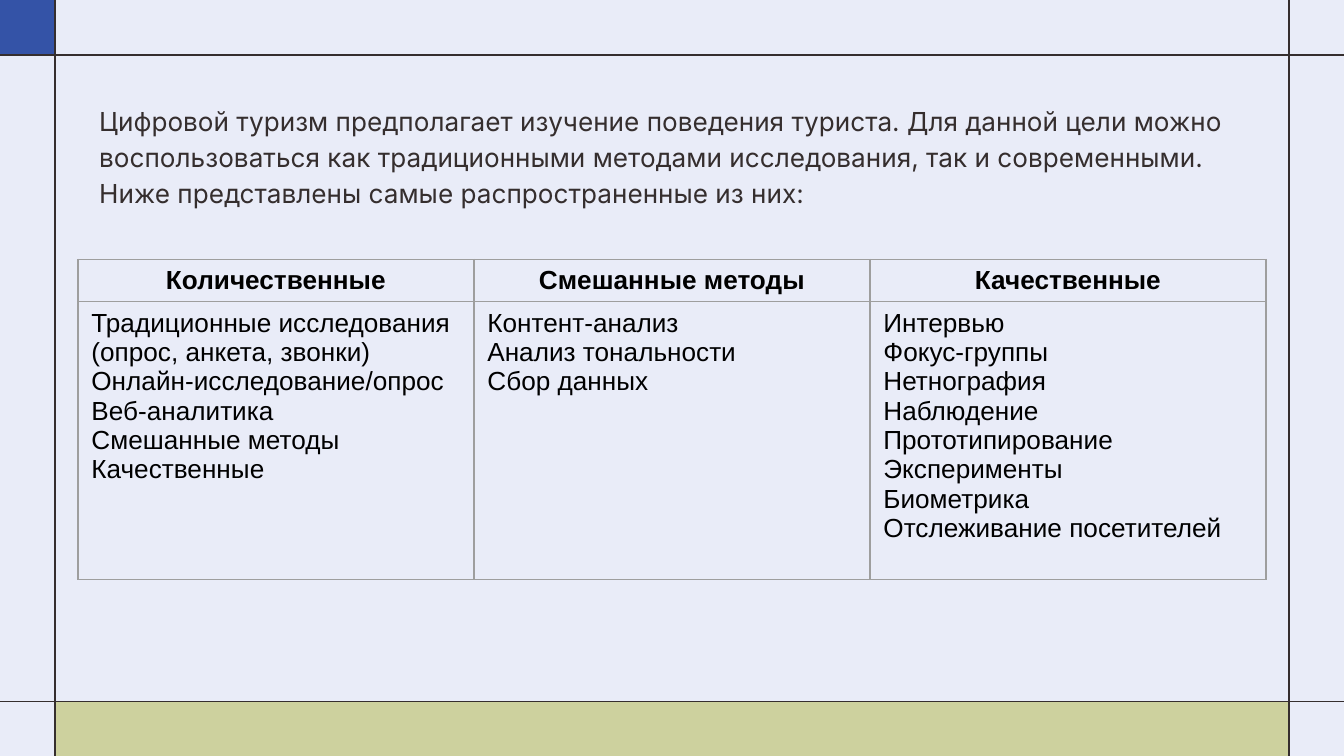
from lxml.etree import SubElement
from pptx import Presentation
from pptx.dml.color import RGBColor as RGB
from pptx.enum.shapes import MSO_CONNECTOR as LINE, MSO_SHAPE as SHAPE
from pptx.enum.text import PP_ALIGN as ALIGN
from pptx.oxml import parse_xml
from pptx.oxml.ns import nsdecls, qn
from pptx.util import Inches, Pt

THEME = {
    "back": "E9ECF8", "blue": "3453A7", "green": "CDD19E",
    "ink": "352E2E", "black": "000000", "grid": "9E9E9E",
    "size": 14, "rule": 0.75, "intro": "Inter", "table": "Arial",
}

INTRO = (
    "Цифровой туризм предполагает изучение поведения туриста. "
    "Для данной цели можно воспользоваться как традиционными методами "
    "исследования, так и современными. "
    "Ниже представлены самые распространенные из них:"
)
METHODS = {
    "Количественные": [
        "Традиционные исследования (опрос, анкета, звонки)",
        "Онлайн-исследование/опрос",
        "Веб-аналитика",
        "Смешанные методы",
        "Качественные",
    ],
    "Смешанные методы": [
        "Контент-анализ",
        "Анализ тональности",
        "Сбор данных",
    ],
    "Качественные": [
        "Интервью",
        "Фокус-группы",
        "Нетнография",
        "Наблюдение",
        "Прототипирование",
        "Эксперименты",
        "Биометрика",
        "Отслеживание посетителей",
    ],
}

WIDTH = 10
HEIGHT = WIDTH * 9 / 16
BLEED = 0.05
EDGE = 0.41
RIGHT, BASE = WIDTH - EDGE, 5.22
ROWS = [0.31, 2.07, 0.67]


def color(name):
    return RGB.from_string(THEME[name])


def box(left, top, width, height):
    return [Inches(n) for n in (left, top, width, height)]


def add_block(slide, place, fill):
    block = slide.shapes.add_shape(SHAPE.RECTANGLE, *box(*place))
    block.shadow.inherit = False
    block.fill.solid()
    block.fill.fore_color.rgb = color(fill)
    block.line.fill.background()


def add_rule(slide, *ends):
    rule = slide.shapes.add_connector(LINE.STRAIGHT, *box(*ends))
    rule.line.color.rgb = color("ink")
    rule.line.width = Pt(THEME["rule"])
    SubElement(rule._element.spPr, qn("a:effectLst"))


def add_run(para, text, font, ink, bold=False):
    run = para.add_run()
    run.text = text
    run.font.name = THEME[font]
    run.font.size = Pt(THEME["size"])
    run.font.bold = bold
    run.font.color.rgb = color(ink)


def fill_cell(cell, lines, head):
    cell.margin_bottom = Inches(0.03)
    frame = cell.text_frame
    for i, text in enumerate(lines):
        para = frame.add_paragraph() if i else frame.paragraphs[0]
        para.alignment = ALIGN.CENTER if head else ALIGN.LEFT
        add_run(para, text, "table", "black", head)


def set_sides(cell, shown):
    """Draw the sides named in shown (L, R, T, B) and clear the others."""
    cell.fill.background()
    props = cell._tc.get_or_add_tcPr()
    for i, side in enumerate("LRTB"):
        paint = "<a:noFill/>"
        if side in shown:
            paint = f'<a:solidFill><a:srgbClr val="{THEME["grid"]}"/></a:solidFill>'
        props.insert(i, parse_xml(
            f'<a:ln{side} {nsdecls("a")} w="{Pt(THEME["rule"])}">{paint}</a:ln{side}>'))


def add_intro(slide):
    frame = slide.shapes.add_textbox(*box(0.64, 0.65, 8.73, 1.13)).text_frame
    frame.word_wrap = True
    frame.margin_left = frame.margin_right = Inches(0.1)
    frame.margin_top = frame.margin_bottom = Inches(0.1)
    para = frame.paragraphs[0]
    para.line_spacing = 1.15
    para.space_after = Pt(12)
    add_run(para, INTRO, "intro", "ink")


def add_methods(slide):
    count = len(METHODS)
    place = box(0.58, 1.93, 8.84, sum(ROWS))
    table = slide.shapes.add_table(len(ROWS), count, *place).table
    table.first_row = table.horz_banding = False
    for row, tall in zip(table.rows, ROWS):
        row.height = Inches(tall)
    for col, (name, items) in enumerate(METHODS.items()):
        for row, lines in enumerate(([name], items)):
            fill_cell(table.cell(row, col), lines, head=row == 0)
        for row, shown in enumerate(("LRTB", "LRTB", "T")):
            set_sides(table.cell(row, col), shown)
    last = len(ROWS) - 1
    table.cell(last, 0).merge(table.cell(last, count - 1))


def main():
    deck = Presentation()
    deck.slide_width, deck.slide_height = Inches(WIDTH), Inches(HEIGHT)
    slide = deck.slides.add_slide(deck.slide_layouts[6])
    slide.background.fill.solid()
    slide.background.fill.fore_color.rgb = color("back")

    side = EDGE + BLEED
    add_block(slide, (-BLEED, -BLEED, side, side), "blue")
    add_block(slide, (EDGE, BASE, RIGHT - EDGE, side), "green")
    for x in (EDGE, RIGHT):
        add_rule(slide, x, -BLEED, x, HEIGHT + BLEED)
    for y in (EDGE, BASE):
        add_rule(slide, -BLEED, y, WIDTH + BLEED, y)
    add_intro(slide)
    add_methods(slide)
    deck.save("out.pptx")


if __name__ == "__main__":
    main()
